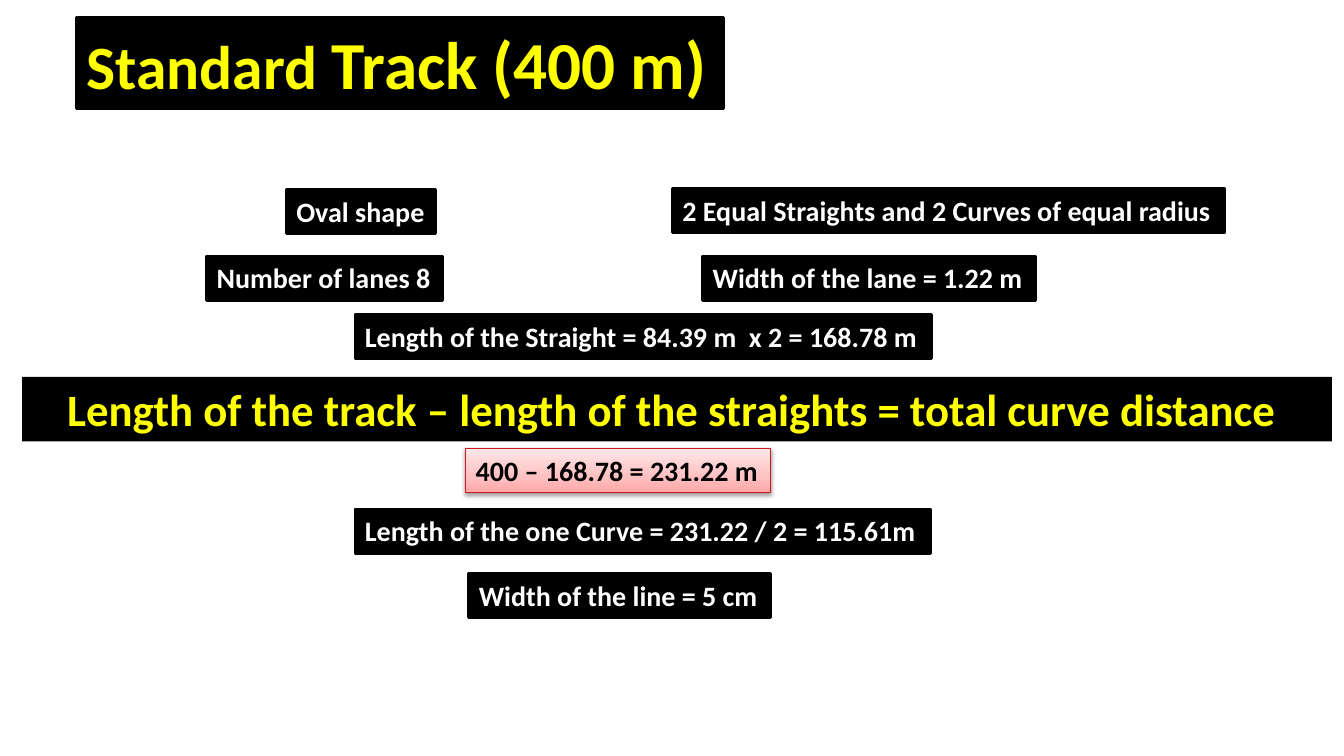
from lxml.etree import SubElement
from pptx import Presentation
from pptx.dml.color import RGBColor
from pptx.enum.shapes import MSO_SHAPE
from pptx.enum.text import MSO_ANCHOR, MSO_AUTO_SIZE, PP_ALIGN
from pptx.oxml.ns import qn
from pptx.util import Inches, Pt

BLACK = RGBColor(0x00, 0x00, 0x00)
WHITE = RGBColor(0xFF, 0xFF, 0xFF)
YELLOW = RGBColor(0xFF, 0xFF, 0x00)
RED = RGBColor(0xCE, 0x18, 0x20)
PINKS = [
    (0, RGBColor(0xFF, 0xA6, 0xA7)),
    (35, RGBColor(0xFF, 0xC0, 0xC1)),
    (100, RGBColor(0xFF, 0xE7, 0xE7)),
]

TITLE = [("Standard ", 44), ("Track (400 m)", 48)]
RULE = "Length of the track – length of the straights = total curve distance "
RESULT = "400 – 168.78 = 231.22 m"
FACTS = [
    ("Oval shape", 2.84, 1.88, 1.48),
    ("2 Equal Straights and 2 Curves of equal radius", 6.67, 1.87, 5.48),
    ("Number of lanes 8", 2.05, 2.54, 2.34),
    ("Width of the lane = 1.22 m", 6.97, 2.54, 3.3),
    ("Length of the Straight = 84.39 m  x 2 = 168.78 m", 3.52, 3.12, 5.72),
    ("Length of the one Curve = 231.22 / 2 = 115.61m", 3.52, 5.05, 5.71),
    ("Width of the line = 5 cm", 4.65, 5.69, 2.99),
]
ROW = 0.44

deck = Presentation()
deck.slide_width, deck.slide_height = Inches(13.33), Inches(7.5)
slide = deck.slides.add_slide(deck.slide_layouts[6])


def label(text, left, top, width, high=ROW, size=20, color=WHITE,
          edge=BLACK, weight=2, wrap=False, align=PP_ALIGN.LEFT):
    box = slide.shapes.add_shape(
        MSO_SHAPE.RECTANGLE, *map(Inches, (left, top, width, high)))
    box.shadow.inherit = False
    box.fill.solid()
    box.fill.fore_color.rgb = BLACK
    if edge is None:
        box.line.fill.background()
    else:
        box.line.color.rgb = edge
        box.line.width = Pt(weight)
    frame = box.text_frame
    frame.word_wrap = wrap
    frame.auto_size = MSO_AUTO_SIZE.SHAPE_TO_FIT_TEXT
    frame.vertical_anchor = MSO_ANCHOR.TOP
    para = frame.paragraphs[0]
    para.alignment = align
    for words, points in [(text, size)] if isinstance(text, str) else text:
        run = para.add_run()
        run.text = words
        font = run.font
        font.name, font.size, font.bold = "Calibri", Pt(points), True
        font.color.rgb = color
    return box


def tint(parent, color, alpha=None):
    node = SubElement(parent, qn("a:srgbClr"), val=str(color))
    if alpha is not None:
        SubElement(node, qn("a:alpha"), val=str(alpha * 1000))


def blush(box):
    box.fill.gradient()
    box.fill.gradient_angle = 90
    props = box.fill._xPr
    stops = props.find(qn("a:gradFill")).find(qn("a:gsLst"))
    for old in list(stops):
        stops.remove(old)
    for share, color in PINKS:
        tint(SubElement(stops, qn("a:gs"), pos=str(share * 1000)), color)
    shade = SubElement(
        props.find(qn("a:effectLst")), qn("a:outerShdw"),
        blurRad=str(Pt(3.1)), dist=str(Pt(1.6)), dir=str(90 * 60000),
        rotWithShape="0")
    tint(shade, BLACK, 38)


label(TITLE, 0.76, 0.17, 6.42, high=0.91, color=YELLOW)
for fact in FACTS:
    label(*fact)
label(RULE, 0.22, 3.74, 12.99, high=0.64, size=32, color=YELLOW,
      edge=None, wrap=True, align=PP_ALIGN.CENTER)
blush(label(RESULT, 4.62, 4.45, 3.02, color=BLACK, edge=RED, weight=0.75))

deck.save("out.pptx")
